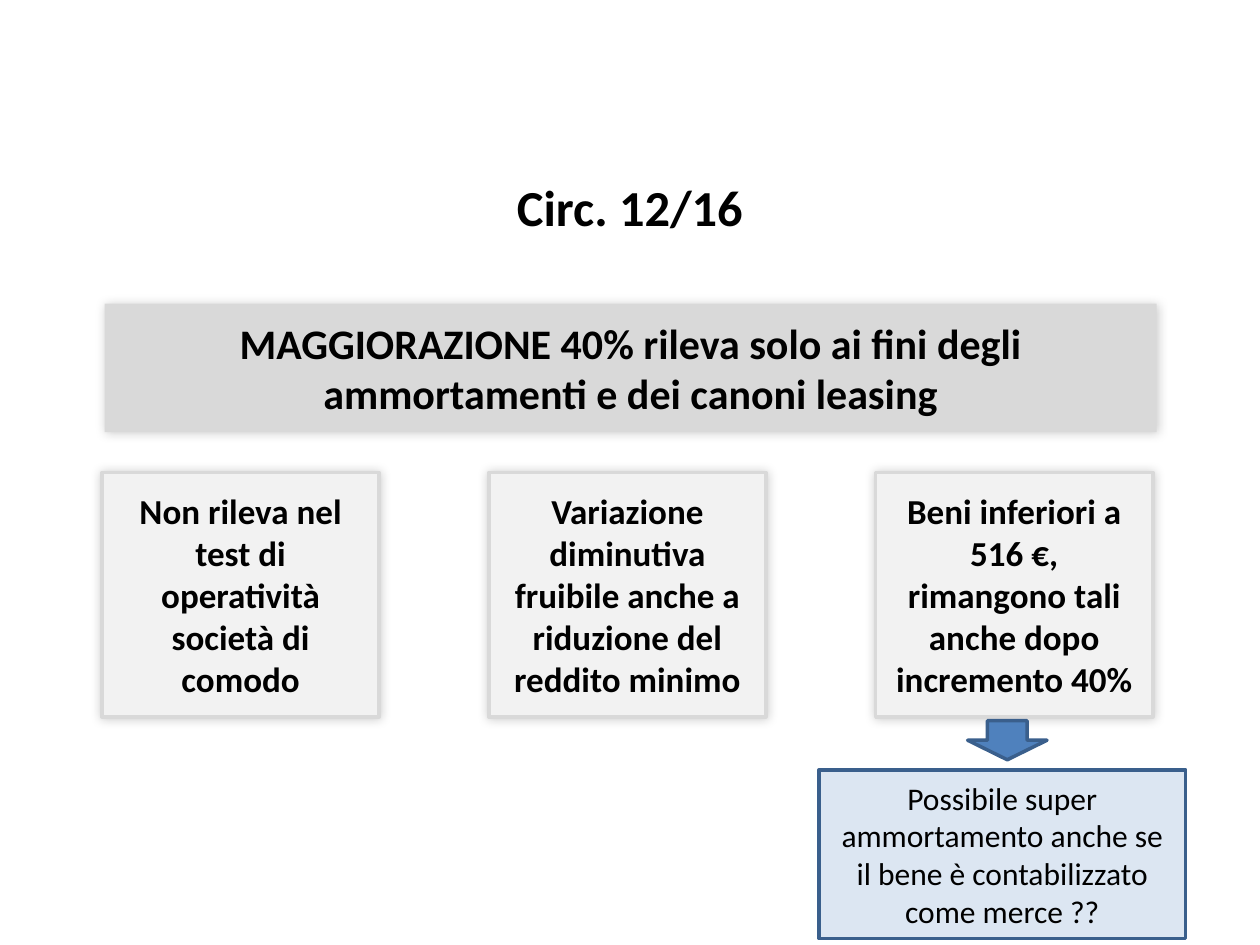
from lxml.etree import SubElement
from pptx import Presentation
from pptx.dml.color import RGBColor
from pptx.enum.shapes import MSO_SHAPE as Preset
from pptx.enum.text import MSO_ANCHOR as Anchor, PP_ALIGN as Align
from pptx.oxml.ns import qn
from pptx.util import Inches, Pt

FONT = "Calibri"
BLACK = RGBColor(0x00, 0x00, 0x00)
BANNER_GREY = RGBColor(0xD9, 0xD9, 0xD9)
CARD_GREY = RGBColor(0xF2, 0xF2, 0xF2)
PALE_BLUE = RGBColor(0xDC, 0xE6, 0xF2)
ARROW_BLUE = RGBColor(0x4F, 0x81, 0xBD)
EDGE_BLUE = RGBColor(0x3A, 0x5F, 0x8C)

CARD_TEXTS = [
    "Non rileva nel test di operatività società di comodo",
    "Variazione diminutiva fruibile anche a riduzione del reddito minimo",
    "Beni inferiori a 516 €, rimangono tali anche dopo incremento 40%",
]
CARD_LEFT, CARD_STEP = 0.81, 3.07


def write_text(shape, text, size, bold=False):
    """Put one centred paragraph into a shape."""
    frame = shape.text_frame
    frame.word_wrap = True
    frame.vertical_anchor = Anchor.MIDDLE
    para = frame.paragraphs[0]
    para.alignment = Align.CENTER
    span = para.add_run()
    span.text = text
    span.font.name = FONT
    span.font.size = Pt(size)
    span.font.bold = bold
    span.font.color.rgb = BLACK


def add_soft_shadow(shape):
    """Add a blurred black shadow at 20% opacity."""
    effects = shape._element.spPr.find(qn("a:effectLst"))
    shadow = SubElement(effects, qn("a:outerShdw"), blurRad=str(Pt(6)),
                        dist="0", dir=str(225 * 60000), rotWithShape="0")
    color = SubElement(shadow, qn("a:srgbClr"), val=str(BLACK))
    SubElement(color, qn("a:alpha"), val="20000")


def add_block(page, left, top, width, height, fill, line=None,
              preset=Preset.RECTANGLE, shadow=False):
    """Add a filled preset shape with an optional edge and shadow."""
    block = page.shapes.add_shape(preset, Inches(left), Inches(top),
                                  Inches(width), Inches(height))
    block.shadow.inherit = False
    block.fill.solid()
    block.fill.fore_color.rgb = fill
    if line is None:
        block.line.fill.background()
    else:
        block.line.color.rgb = line
        block.line.width = Pt(2)
    if shadow:
        add_soft_shadow(block)
    return block


def main():
    deck = Presentation()
    deck.slide_width, deck.slide_height = Inches(10), Inches(7.5)
    page = deck.slides.add_slide(deck.slide_layouts[6])

    # Title
    title = page.shapes.add_textbox(Inches(0), Inches(1.34),
                                    Inches(10), Inches(0.6))
    write_text(title, "Circ. 12/16", size=28.8, bold=True)

    # Banner
    banner = add_block(page, 0.83, 2.41, 8.35, 1.02, BANNER_GREY, shadow=True)
    write_text(banner, "MAGGIORAZIONE 40% rileva solo ai fini degli "
               "ammortamenti e dei canoni leasing", size=24, bold=True)

    # Row of three cards
    for index, text in enumerate(CARD_TEXTS):
        card = add_block(page, CARD_LEFT + index * CARD_STEP, 3.75, 2.2, 1.94,
                         CARD_GREY, line=BANNER_GREY, shadow=True)
        write_text(card, text, size=20, bold=True)

    # Question below the last card, with its arrow
    question = add_block(page, 6.5, 6.11, 2.91, 1.34, PALE_BLUE, line=EDGE_BLUE)
    write_text(question, "Possibile super ammortamento anche se il bene è "
               "contabilizzato come merce ??", size=18)
    add_block(page, 7.68, 5.72, 0.63, 0.31, ARROW_BLUE, line=EDGE_BLUE,
              preset=Preset.DOWN_ARROW)

    deck.save("out.pptx")


if __name__ == "__main__":
    main()
